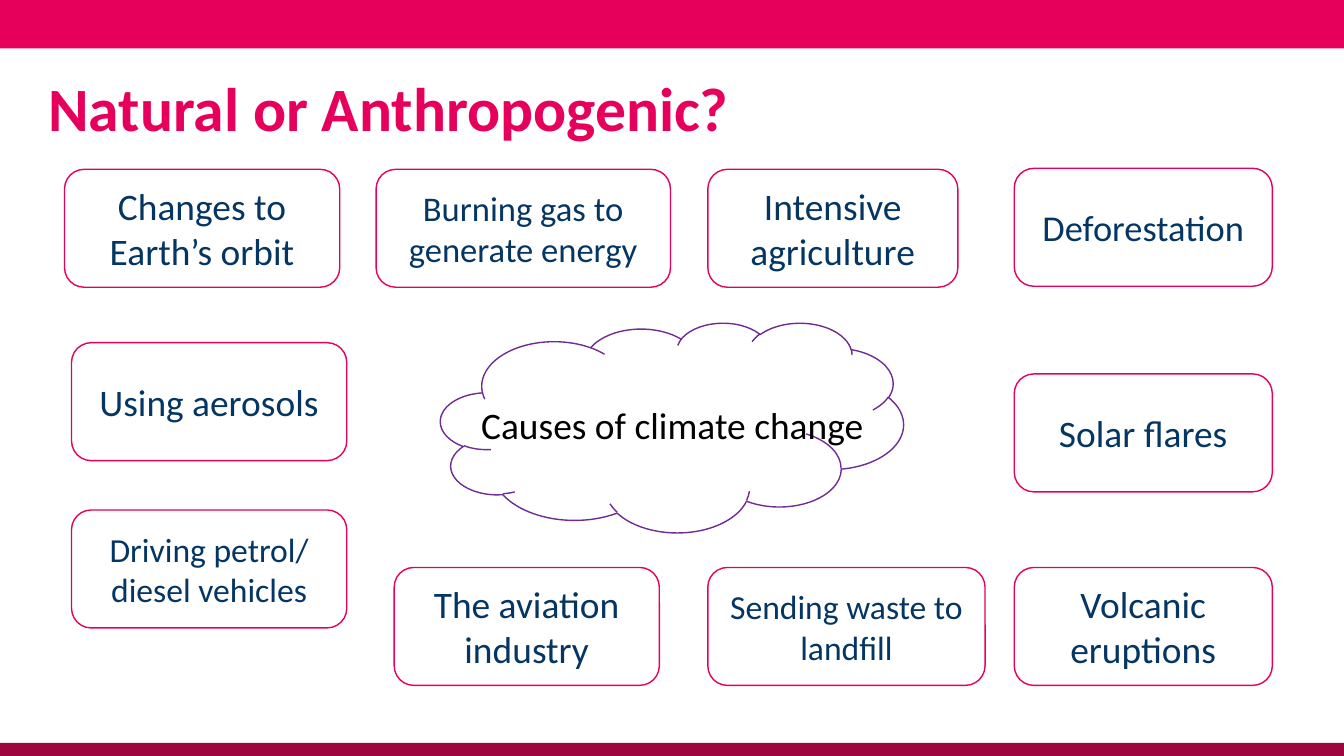
from dataclasses import dataclass

from pptx import Presentation
from pptx.dml.color import RGBColor
from pptx.enum.shapes import MSO_SHAPE
from pptx.enum.text import MSO_ANCHOR, MSO_AUTO_SIZE, PP_ALIGN
from pptx.util import Inches, Pt

RECTANGLE = MSO_SHAPE.RECTANGLE
ROUNDED = MSO_SHAPE.ROUNDED_RECTANGLE
CLOUD = MSO_SHAPE.CLOUD
MIDDLE = MSO_ANCHOR.MIDDLE
LEFT, CENTER = PP_ALIGN.LEFT, PP_ALIGN.CENTER
NO_AUTOFIT = MSO_AUTO_SIZE.NONE


@dataclass(frozen=True)
class Theme:
    """Colours, font and type sizes of the slide."""
    font: str = "Calibri"
    pink: str = "E6005B"
    card_edge: str = "E5005B"
    maroon: str = "9E043D"
    navy: str = "053663"
    purple: str = "6F2C91"
    white: str = "FFFFFF"
    black: str = "000000"
    title_size: float = 44
    large: float = 26.7
    single: float = 26
    medium: float = 24.7
    small: float = 24


THEME = Theme()
SLIDE_WIDTH, SLIDE_HEIGHT = 13.33, 7.5
CARD_HEIGHT = 1.17
TOP_ROW, BOTTOM_ROW = 1.68, 5.63
LEFT_COLUMN, MIDDLE_COLUMN, RIGHT_COLUMN = 0.71, 7.02, 10.06
LEFT_WIDTH, RIGHT_WIDTH = 2.73, 2.56

CAUSES = [
    ("Changes to Earth’s orbit", 0.64, TOP_ROW, LEFT_WIDTH, THEME.large),
    ("Burning gas to generate energy", 3.73, TOP_ROW, 2.92, THEME.medium),
    ("Intensive agriculture", MIDDLE_COLUMN, TOP_ROW, 2.48, THEME.large),
    ("Deforestation", RIGHT_COLUMN, 1.67, RIGHT_WIDTH, THEME.single),
    ("Using aerosols", LEFT_COLUMN, 3.4, LEFT_WIDTH, THEME.large),
    ("Solar flares", RIGHT_COLUMN, 3.71, RIGHT_WIDTH, THEME.large),
    ("Driving petrol/ diesel vehicles", LEFT_COLUMN, 5.06, LEFT_WIDTH, THEME.small),
    ("The aviation industry", 3.91, BOTTOM_ROW, 2.63, THEME.large),
    ("Sending waste to landfill", MIDDLE_COLUMN, BOTTOM_ROW, 2.75, THEME.small),
    ("Volcanic eruptions", RIGHT_COLUMN, BOTTOM_ROW, RIGHT_WIDTH, THEME.large),
]


def write(frame, wording, size, color, align=CENTER, bold=False):
    """Put one formatted paragraph into a text frame."""
    frame.text = wording
    frame.word_wrap = True
    frame.vertical_anchor = MIDDLE
    paragraph = frame.paragraphs[0]
    paragraph.alignment = align
    font = paragraph.runs[0].font
    font.name = THEME.font
    font.size = Pt(size)
    font.bold = bold
    font.color.rgb = RGBColor.from_string(color)


def add_panel(slide, preset, box, fill, edge=None):
    """Draw a flat filled shape in a box, outlined if an edge colour is given."""
    panel = slide.shapes.add_shape(preset, *map(Inches, box))
    panel.shadow.inherit = False
    panel.fill.solid()
    panel.fill.fore_color.rgb = RGBColor.from_string(fill)
    if edge:
        panel.line.color.rgb = RGBColor.from_string(edge)
        panel.line.width = Pt(1)
    else:
        panel.line.fill.background()
    return panel


def add_bands(slide, box):
    """Draw the coloured bands along the top and bottom of the box."""
    left, top, width, height = box
    add_panel(slide, RECTANGLE, (left, top, width, 0.48), THEME.pink)
    add_panel(slide, RECTANGLE, (left, top + height - 0.13, width, 0.13), THEME.maroon)


def add_title(slide, box):
    """Place and format the title placeholder."""
    title = slide.shapes.title
    title.left, title.top, title.width, title.height = map(Inches, box)
    frame = title.text_frame
    frame.margin_left = 0
    frame.auto_size = NO_AUTOFIT
    write(frame, "Natural or Anthropogenic?", THEME.title_size, THEME.pink, LEFT, True)


def add_topic_cloud(slide, box):
    """Draw the central cloud with its caption across the middle."""
    left, top, width, _ = box
    add_panel(slide, CLOUD, box, THEME.white, THEME.purple)
    caption_box = (left + 0.29, top + 0.74, width - 0.57, 0.55)
    caption = slide.shapes.add_textbox(*map(Inches, caption_box))
    write(caption.text_frame, "Causes of climate change", THEME.large, THEME.black)


def add_cause_card(slide, cause, box, size):
    """Draw one rounded card naming a cause."""
    card = add_panel(slide, ROUNDED, box, THEME.white, THEME.card_edge)
    write(card.text_frame, cause, size, THEME.navy)


def main():
    """Build the slide and save it."""
    deck = Presentation()
    deck.slide_width, deck.slide_height = Inches(SLIDE_WIDTH), Inches(SLIDE_HEIGHT)
    slide = deck.slides.add_slide(deck.slide_layouts.get_by_name("Title Only"))
    add_bands(slide, (0, 0, SLIDE_WIDTH, SLIDE_HEIGHT))
    add_title(slide, (0.48, 0.51, 12.36, 1.1))
    add_topic_cloud(slide, (4.37, 3.2, 4.59, 2.08))
    for cause, left, top, width, size in CAUSES:
        add_cause_card(slide, cause, (left, top, width, CARD_HEIGHT), size)
    deck.save("out.pptx")


if __name__ == "__main__":
    main()
